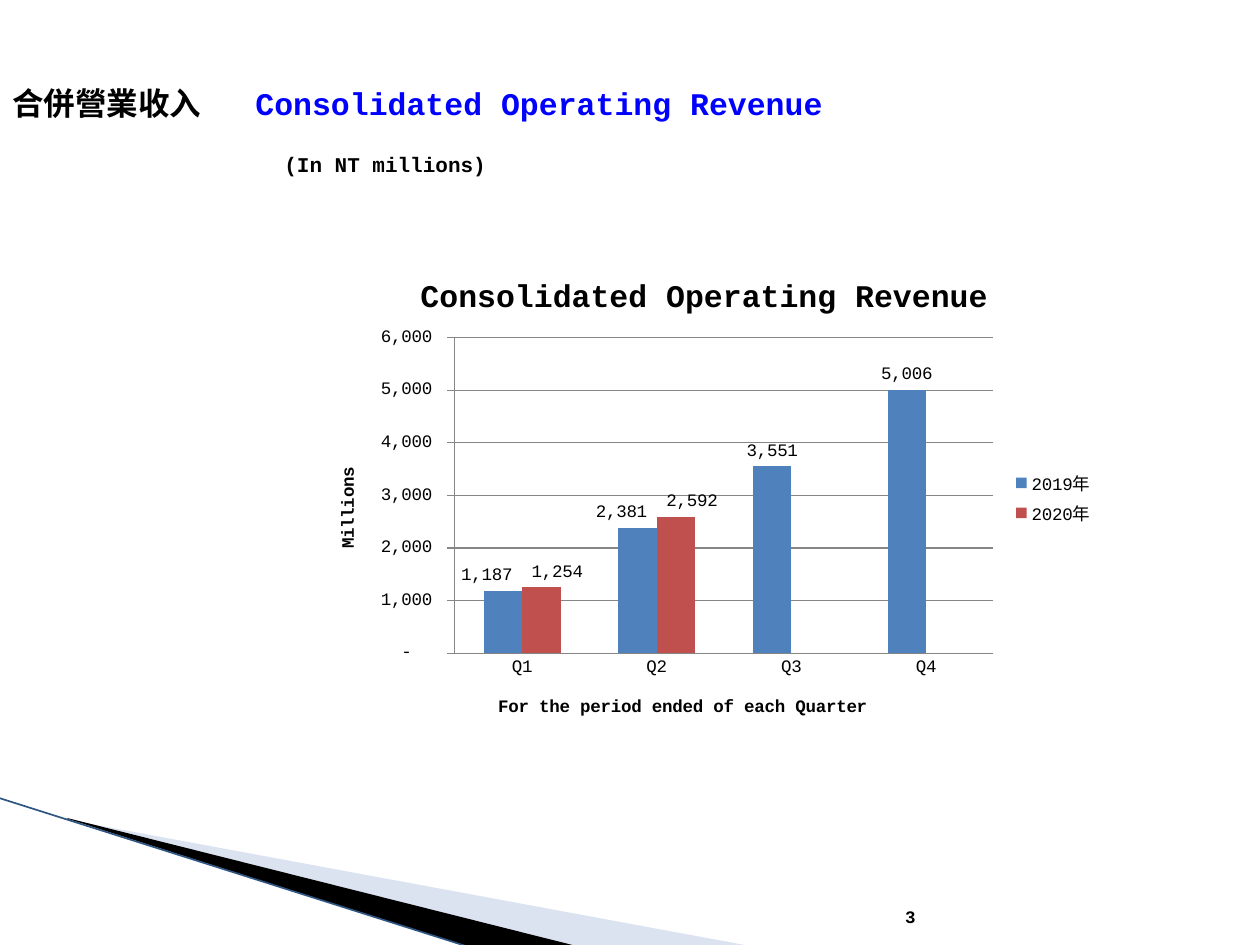
from lxml import etree
from pptx import Presentation
from pptx.chart.data import CategoryChartData
from pptx.dml.color import RGBColor
from pptx.enum.chart import XL_CHART_TYPE, XL_LABEL_POSITION, XL_LEGEND_POSITION, XL_TICK_MARK
from pptx.enum.shapes import MSO_CONNECTOR
from pptx.enum.text import MSO_ANCHOR, PP_ALIGN
from pptx.oxml.ns import qn
from pptx.util import Emu, Pt

COLUMNS = XL_CHART_TYPE.COLUMN_CLUSTERED
OUTSIDE_END = XL_LABEL_POSITION.OUTSIDE_END
LEGEND_RIGHT = XL_LEGEND_POSITION.RIGHT
TICK_NONE, TICK_CROSS = XL_TICK_MARK.NONE, XL_TICK_MARK.CROSS
STRAIGHT = MSO_CONNECTOR.STRAIGHT
MIDDLE, BOTTOM = MSO_ANCHOR.MIDDLE, MSO_ANCHOR.BOTTOM
LEFT, RIGHT = PP_ALIGN.LEFT, PP_ALIGN.RIGHT
NUMBER_FORMAT = '_-* #,##0_-;\\-* #,##0_-;_-* "-"??_-;_-@_'


def px(length):
    return Emu(length * 914400 // 126)


def color(value):
    return RGBColor.from_string(value)


def place(parent, position=1, **values):
    layout = parent.find(qn("c:layout"))
    if layout is not None:
        parent.remove(layout)
    layout = etree.Element(qn("c:layout"))
    manual = etree.SubElement(layout, qn("c:manualLayout"))
    for name, value in values.items():
        etree.SubElement(manual, qn(f"c:{name}"), val=str(value))
    parent.insert(position, layout)


class SlideBuilder:
    font_name = "Courier New"
    east_asian_font = "Noto Sans CJK SC"
    black = "000000"
    grid_color = "868686"

    def __init__(self, slide):
        self.slide = slide

    def style(self, font, size, value=black, bold=True, name=font_name):
        font.size, font.bold, font.name = Pt(size), bold, name
        font.color.rgb = color(value)

    def east_asian(self, properties):
        etree.SubElement(properties, qn("a:ea"), typeface=self.east_asian_font)

    def text(self, box, runs, size, value=black, anchor=MIDDLE, align=LEFT, wrap=True):
        shape = self.slide.shapes.add_textbox(*map(px, box))
        frame = shape.text_frame
        frame.word_wrap = wrap
        frame.vertical_anchor = anchor
        paragraph = frame.paragraphs[0]
        paragraph.alignment = align
        for content, name in runs:
            run = paragraph.add_run()
            run.text = content
            self.style(run.font, size, value, name=name)
            self.east_asian(run._r.get_or_add_rPr())

    def polygon(self, points, value, opacity=100):
        start, *rest = [(px(x), px(y)) for x, y in points]
        builder = self.slide.shapes.build_freeform(*start)
        builder.add_line_segments(rest, close=True)
        shape = builder.convert_to_shape()
        shape.shadow.inherit = False
        shape.line.fill.background()
        shape.fill.solid()
        shape.fill.fore_color.rgb = color(value)
        if opacity < 100:
            fill = shape.fill._xPr.find(qn("a:solidFill"))
            etree.SubElement(fill[0], qn("a:alpha"), val=str(opacity * 1000))

    def line(self, start, end, value, width):
        connector = self.slide.shapes.add_connector(STRAIGHT, *map(px, start + end))
        connector.line.color.rgb = color(value)
        connector.line.width = Pt(width)
        etree.SubElement(connector._element.spPr, qn("a:effectLst"))

    def title(self, owner, content, size):
        paragraph = owner.text_frame.paragraphs[0]
        run = paragraph.add_run()
        run.text = content
        self.style(run.font, size)

    def axis(self, axis, title, tick, x, y):
        axis.major_tick_mark = tick
        axis.minor_tick_mark = TICK_NONE
        axis.format.line.color.rgb = color(self.grid_color)
        self.title(axis.axis_title, title, 10)
        place(axis.axis_title._element, xMode="edge", yMode="edge", x=x, y=y)

    def column_chart(self, box, title, categories, series_list):
        data = CategoryChartData(number_format=NUMBER_FORMAT)
        data.categories = categories
        for name, values, _, _ in series_list:
            data.add_series(name, values)
        chart = self.slide.shapes.add_chart(COLUMNS, *map(px, box), data).chart
        self.style(chart.font, 10, bold=False)
        self.east_asian(chart._chartSpace.xpath("./c:txPr//a:defRPr")[0])
        chart.has_title = True
        self.title(chart.chart_title, title, 18)
        chart.has_legend = True
        chart.legend.position = LEGEND_RIGHT
        chart.legend.include_in_layout = False

        self.axis(chart.category_axis, "For the period ended of each Quarter", TICK_NONE, 0.24, 0.9)
        value_axis = chart.value_axis
        self.axis(value_axis, "Millions", TICK_CROSS, 0.04, 0.43)
        value_axis.axis_title._element.find(".//" + qn("a:bodyPr")).set("rot", "-5400000")
        value_axis.minimum_scale, value_axis.maximum_scale = 0, 6000
        value_axis.major_unit = 1000
        value_axis.major_gridlines.format.line.color.rgb = color(self.grid_color)
        value_axis.tick_labels.number_format = NUMBER_FORMAT
        value_axis.tick_labels.number_format_is_linked = False
        place(chart._chartSpace.xpath(".//c:plotArea")[0], 0, layoutTarget="inner",
              xMode="edge", yMode="edge", x=0.19, y=0.17, w=0.67, h=0.65)

        plot = chart.plots[0]
        plot.vary_by_categories = False
        plot.gap_width, plot.overlap = 150, 0
        for series, (_, _, fill, shift) in zip(plot.series, series_list):
            series.format.fill.solid()
            series.format.fill.fore_color.rgb = color(fill)
            labels = series.data_labels
            labels.show_value = True
            labels.number_format = NUMBER_FORMAT
            labels.number_format_is_linked = False
            labels.position = OUTSIDE_END
            for index in range(2):
                series.points[index].data_label.position = OUTSIDE_END
            for label in series._element.xpath("./c:dLbls/c:dLbl"):
                place(label, x=shift, y=0)


def main():
    presentation = Presentation()
    presentation.slide_width, presentation.slide_height = px(1260), px(945)
    builder = SlideBuilder(presentation.slides.add_slide(presentation.slide_layouts[6]))
    latin, east_asian = builder.font_name, builder.east_asian_font

    builder.polygon([(69, 820), (750, 946), (575, 946), (69, 819)], "A7B9DB", 40)
    builder.polygon([(67, 818), (576, 946), (469, 947), (68, 819)], "000000")
    builder.line((-1, 798), (469, 947), "2F5583", 0.95)

    builder.text((604, 883, 324, 50), [("3", latin)], 10, anchor=BOTTOM, align=RIGHT)
    builder.text((243, 76, 883, 54), [("Consolidated Operating Revenue", latin)], 18, "0000FF")
    builder.text((0, 78, 217, 50), [("合併", latin), ("營業收入", east_asian)], 18, wrap=False)
    builder.text((272, 145, 456, 38), [("(In NT millions)", latin)], 12)

    builder.column_chart(
        (302, 255, 804, 486), "Consolidated Operating Revenue", ["Q1", "Q2", "Q3", "Q4"],
        [("2019年", (1187, 2381, 3551, 5006), "4F81BD", -0.02),
         ("2020年", (1254, 2592, None, None), "C0504D", 0.02)])
    presentation.save("out.pptx")


if __name__ == "__main__":
    main()
